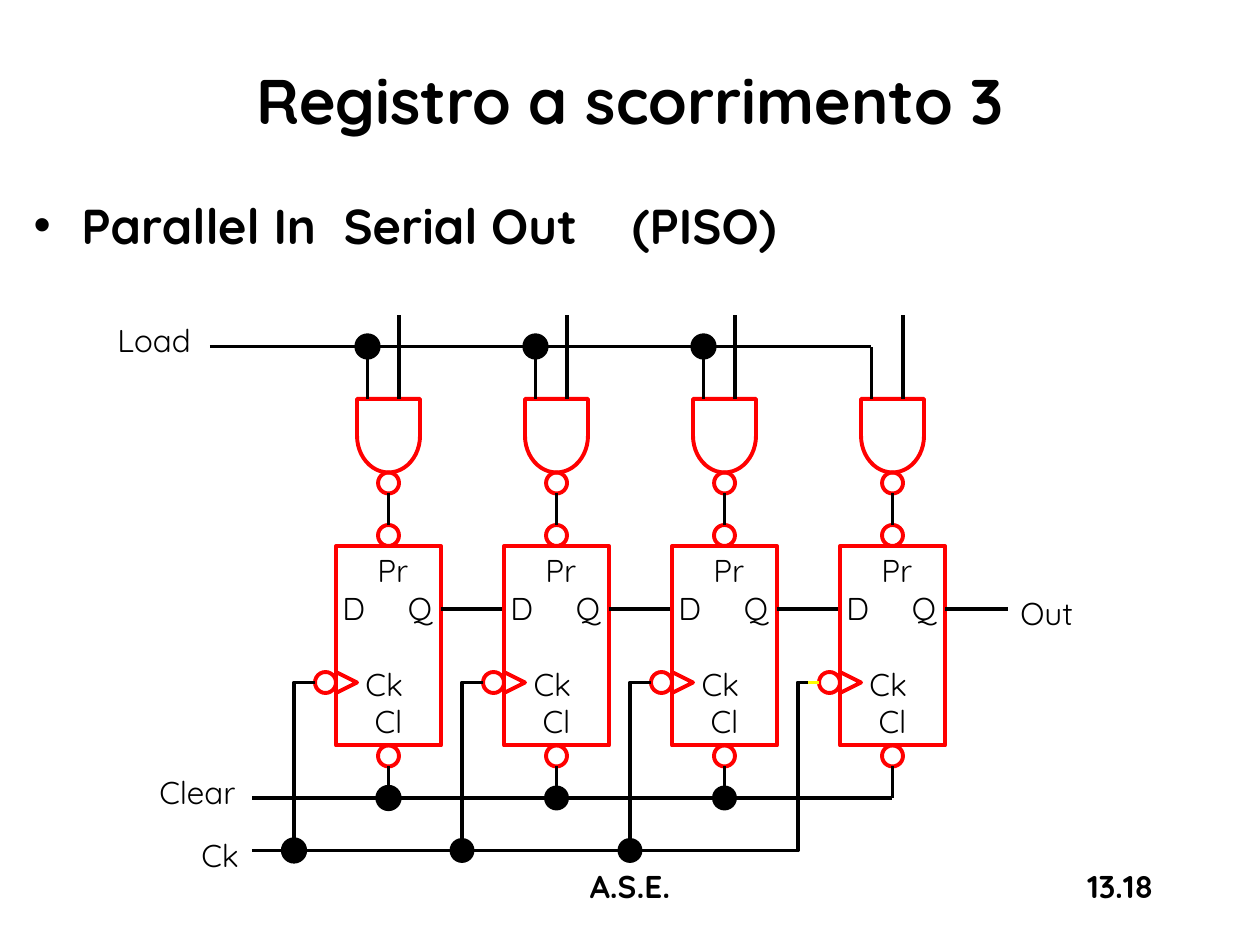
from lxml.etree import SubElement
from pptx import Presentation
from pptx.dml.color import RGBColor
from pptx.enum.shapes import MSO_CONNECTOR as LINK, MSO_SHAPE as SHAPE
from pptx.enum.text import MSO_ANCHOR as ANCHOR, MSO_AUTO_SIZE as FIT, PP_ALIGN as ALIGN
from pptx.oxml.ns import qn
from pptx.util import Inches, Pt

BLACK = RGBColor(0, 0, 0)
RED = RGBColor(255, 0, 0)
YELLOW = RGBColor(255, 255, 0)
FONT = "Quicksand"

UNIT = Inches(1) // 12   # the circuit sits on a grid of 12 cells to the inch
PITCH = 16               # cells from one stage to the next
STAGES = 4
LOAD, CLEAR, CLOCK = 33, 76, 81   # rows of the shared lines
PIN_Q, PIN_CK = 58, 65            # rows of the flip-flop pins


def cells(*nums):
    return [int(n * UNIT) for n in nums]


def write(frame, *lines, size=18, bold=False, align=ALIGN.LEFT):
    """Fill a text frame with one paragraph per line."""
    for i, line in enumerate(lines):
        para = frame.paragraphs[0] if i == 0 else frame.add_paragraph()
        para.alignment = align
        run = para.add_run()
        run.text = line
        font = run.font
        font.name, font.size, font.bold = FONT, Pt(size), bold
        font.color.rgb = BLACK
    return frame.paragraphs


def set_tabs(para, *stops):
    """Add left tab stops, given in inches from the text edge."""
    tabs = SubElement(para._p.get_or_add_pPr(), qn("a:tabLst"))
    for stop in stops:
        SubElement(tabs, qn("a:tab"), pos=str(Inches(stop)), algn="l")


def label(slide, text, x, y, w, h=4.8, wrap=False, **style):
    frame = slide.shapes.add_textbox(*cells(x, y, w, h)).text_frame
    frame.word_wrap = wrap
    frame.auto_size = FIT.NONE if wrap else FIT.SHAPE_TO_FIT_TEXT
    write(frame, text, **style)


def outline(shape, color, width=2.25):
    shape.shadow.inherit = False
    shape.fill.background()
    shape.line.color.rgb = color
    shape.line.width = Pt(width)


def part(shapes, kind, x, y, w=2, h=2, turn=0):
    """Draw an unfilled red symbol."""
    shape = shapes.add_shape(kind, *cells(x, y, w, h))
    shape.rotation = turn
    outline(shape, RED)
    return shape


def dot(slide, x, y, width=2.25):
    """Mark a junction centred on a grid point."""
    shape = slide.shapes.add_shape(SHAPE.OVAL, *cells(x - 1, y - 1, 2, 2))
    outline(shape, BLACK, width)
    shape.fill.solid()
    shape.fill.fore_color.rgb = BLACK


def wire(slide, x1, y1, x2, y2, color=BLACK):
    line = slide.shapes.add_connector(LINK.STRAIGHT, *cells(x1, y1, x2, y2))
    line.line.color.rgb = color
    line.line.width = Pt(2.25)
    SubElement(line._element.spPr, qn("a:effectLst"))


def bent(slide, start, *points):
    """Draw a wire with corners."""
    path = slide.shapes.build_freeform(*start, scale=UNIT)
    path.add_line_segments(points, close=False)
    outline(path.convert_to_shape(), BLACK)


def flip_flop(slide, x):
    """Draw a flip-flop whose left side is at column x."""
    box = part(slide.shapes, SHAPE.RECTANGLE, x, 52, 10, 19)
    frame = box.text_frame
    frame.word_wrap = True
    frame.vertical_anchor = ANCHOR.MIDDLE
    frame.margin_left = frame.margin_right = Inches(0.05)
    pins = write(frame, " Pr", "D\tQ", "Ck ", "Cl", align=ALIGN.CENTER)
    pins[1].alignment = ALIGN.LEFT
    set_tabs(pins[1], 0.52)
    pins[2].space_before = Pt(21.6)
    for left, top in ((x + 4, 50), (x + 4, 71), (x - 2, PIN_CK - 1)):
        part(slide.shapes, SHAPE.OVAL, left, top)
    part(slide.shapes, SHAPE.ISOSCELES_TRIANGLE, x, PIN_CK - 1, turn=90)


def gate(slide, x):
    """Draw the NAND gate above a flip-flop, with its three wires."""
    group = slide.shapes.add_group_shape()
    part(group.shapes, SHAPE.FLOWCHART_DELAY, x + 1.5, 38.5, 7, 6, turn=90)
    part(group.shapes, SHAPE.OVAL, x + 4, 45, turn=90)
    wire(slide, x + 5, 47, x + 5, 50)
    wire(slide, x + 6, 38, x + 6, 30)
    wire(slide, x + 3, 38, x + 3, LOAD)


def stage(slide, i):
    x = 32 + PITCH * i
    flip_flop(slide, x)
    gate(slide, x)
    wire(slide, x + 10, PIN_Q, x + PITCH, PIN_Q)
    wire(slide, x + 5, 73, x + 5, CLEAR)
    if i < STAGES - 1:
        bent(slide, (x - 2, PIN_CK), (x - 4, PIN_CK), (x - 4, CLOCK))
        width = 3 if i == 0 else 2.25
        dot(slide, x + 3, LOAD, 3)
        dot(slide, x + 5, CLEAR, width)
        dot(slide, x - 4, CLOCK, width)


def buses(slide):
    last = 32 + PITCH * (STAGES - 1)
    wire(slide, 20, LOAD, last + 3, LOAD)
    wire(slide, 24, CLEAR, last + 5, CLEAR)
    bent(slide, (24, CLOCK), (last - 4, CLOCK), (last - 4, PIN_CK), (last - 3, PIN_CK))
    wire(slide, last - 3, PIN_CK, last - 2, PIN_CK, YELLOW)


def heading(slide):
    title, body = slide.placeholders
    for holder, top, height in ((title, 2, 15), (body, 18, 62)):
        holder.left, holder.top, holder.width, holder.height = cells(2, top, 116, height)
    title.text_frame.vertical_anchor = ANCHOR.MIDDLE
    write(title.text_frame, "Registro a scorrimento 3", size=36, bold=True, align=ALIGN.CENTER)
    item = write(body.text_frame, "Parallel In\tSerial Out\t(PISO)", size=28, bold=True)[0]
    props = item._p.get_or_add_pPr()
    props.set("marL", str(Inches(0.38)))
    props.set("indent", str(-Inches(0.38)))
    set_tabs(item, 2.46, 4.75)


def main():
    deck = Presentation()
    deck.slide_width, deck.slide_height = Inches(10), Inches(7.5)
    slide = deck.slides.add_slide(deck.slide_layouts[1])
    heading(slide)
    for i in range(STAGES):
        stage(slide, i)
    buses(slide)
    for text, x, y, w in (("Load", 10, 30, 9.7), ("Clear", 14, 73, 10.3),
                          ("Ck", 18, 79, 6.4), ("Out", 96, 56, 7.7)):
        label(slide, text, x, y, w)
    label(slide, "A.S.E.", 41, 82, 38, 6, wrap=True, bold=True, align=ALIGN.CENTER)
    label(slide, "13.18", 86, 82, 25, 6, wrap=True, bold=True, align=ALIGN.RIGHT)
    deck.save("out.pptx")


if __name__ == "__main__":
    main()
